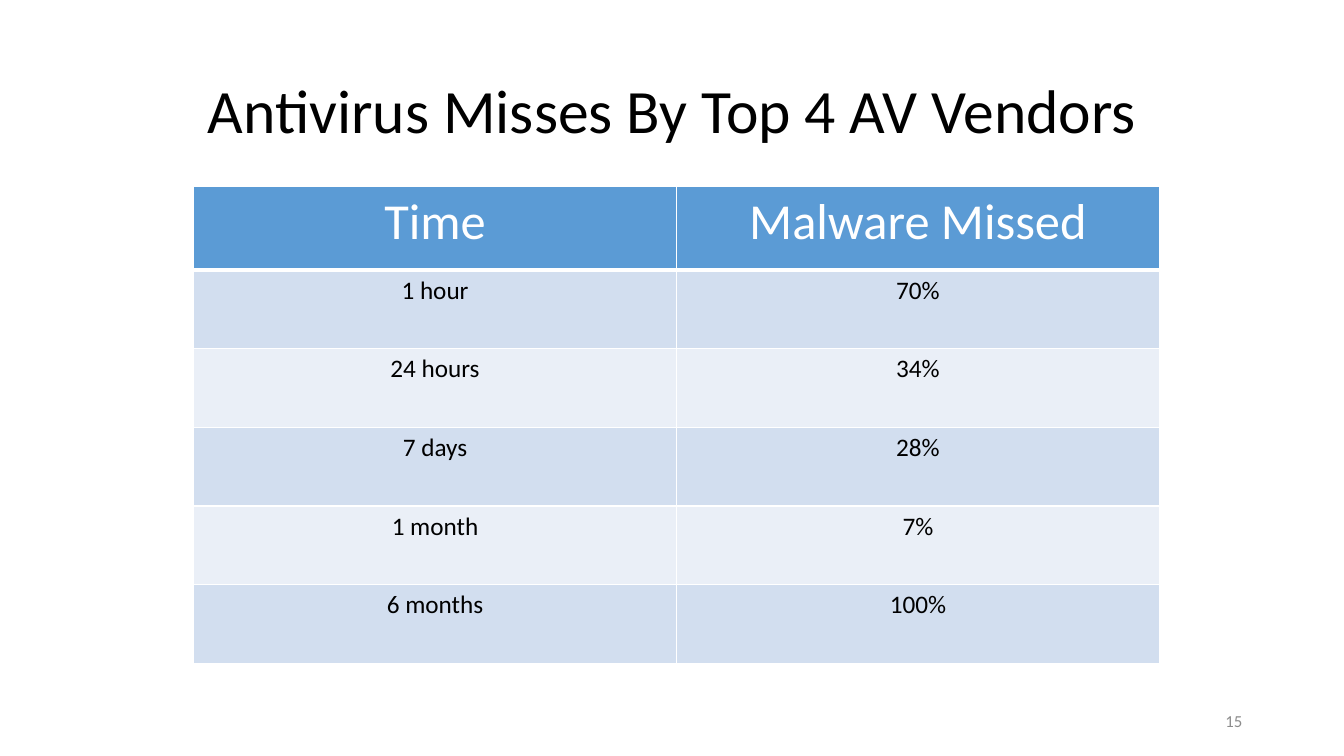
import pptx
import pptx.util
import pptx.dml.color
import pptx.enum.text
import lxml.etree
from pptx.util import Inches

COLORS = {
    "title": "000000",
    "number": "8C8C8C",
    "header": "5B9BD5",
    "header_text": "FFFFFF",
    "odd_row": "D2DEEF",
    "even_row": "EAEFF7",
    "body_text": "000000",
    "border": "FFFFFF",
}
ALIGN = pptx.enum.text.PP_ALIGN
ANCHOR = pptx.enum.text.MSO_ANCHOR
DRAWING = "{http://schemas.openxmlformats.org/drawingml/2006/main}"


def write(frame, text, size, color, align):
    frame.text = text
    para = frame.paragraphs[0]
    para.alignment = align
    font = para.runs[0].font
    font.name = "Calibri"
    font.size = pptx.util.Pt(size)
    font.bold = False
    font.color.rgb = pptx.dml.color.RGBColor.from_string(COLORS[color])
    return para


def add_border(cell, side, points):
    properties = cell._tc.get_or_add_tcPr()
    line = lxml.etree.SubElement(properties, DRAWING + side, w=str(pptx.util.Pt(points)))
    fill = lxml.etree.SubElement(line, DRAWING + "solidFill")
    lxml.etree.SubElement(fill, DRAWING + "srgbClr", val=COLORS["border"])


deck = pptx.Presentation()
deck.slide_width = Inches(13.33)
deck.slide_height = Inches(7.5)
page = deck.slides.add_slide(deck.slide_layouts[6])

# Title and slide number
labels = [
    ("Antivirus Misses By Top 4 AV Vendors", (0.92, 0.4, 11.5, 1.45), 44, "title", ALIGN.CENTER, 0.9),
    ("15", (9.42, 6.95, 3, 0.4), 12, "number", ALIGN.RIGHT, 1.0),
]
for text, place, size, color, align, spacing in labels:
    box = page.shapes.add_textbox(*[Inches(length) for length in place])
    box.text_frame.word_wrap = True
    box.text_frame.vertical_anchor = ANCHOR.MIDDLE
    para = write(box.text_frame, text, size, color, align)
    para.line_spacing = spacing

# Table of missed malware over time
rows = [
    ("Time", "Malware Missed"),
    ("1 hour", "70%"),
    ("24 hours", "34%"),
    ("7 days", "28%"),
    ("1 month", "7%"),
    ("6 months", "100%"),
]
table = page.shapes.add_table(
    len(rows), 2, Inches(1.92), Inches(1.85), Inches(9.58), Inches(4.73)
).table
for row_index, values in enumerate(rows):
    is_header = row_index == 0
    table.rows[row_index].height = Inches(0.83 if is_header else 0.78)
    if is_header:
        fill_color, text_color, size = "header", "header_text", 36
    else:
        fill_color = "odd_row" if row_index % 2 else "even_row"
        text_color, size = "body_text", 18
    for column_index, value in enumerate(values):
        cell = table.cell(row_index, column_index)
        write(cell.text_frame, value, size, text_color, ALIGN.CENTER)
        for side in ("lnL", "lnR", "lnT", "lnB"):
            add_border(cell, side, 3 if is_header and side == "lnB" else 1)
        cell.fill.solid()
        cell.fill.fore_color.rgb = pptx.dml.color.RGBColor.from_string(COLORS[fill_color])

deck.save("out.pptx")
